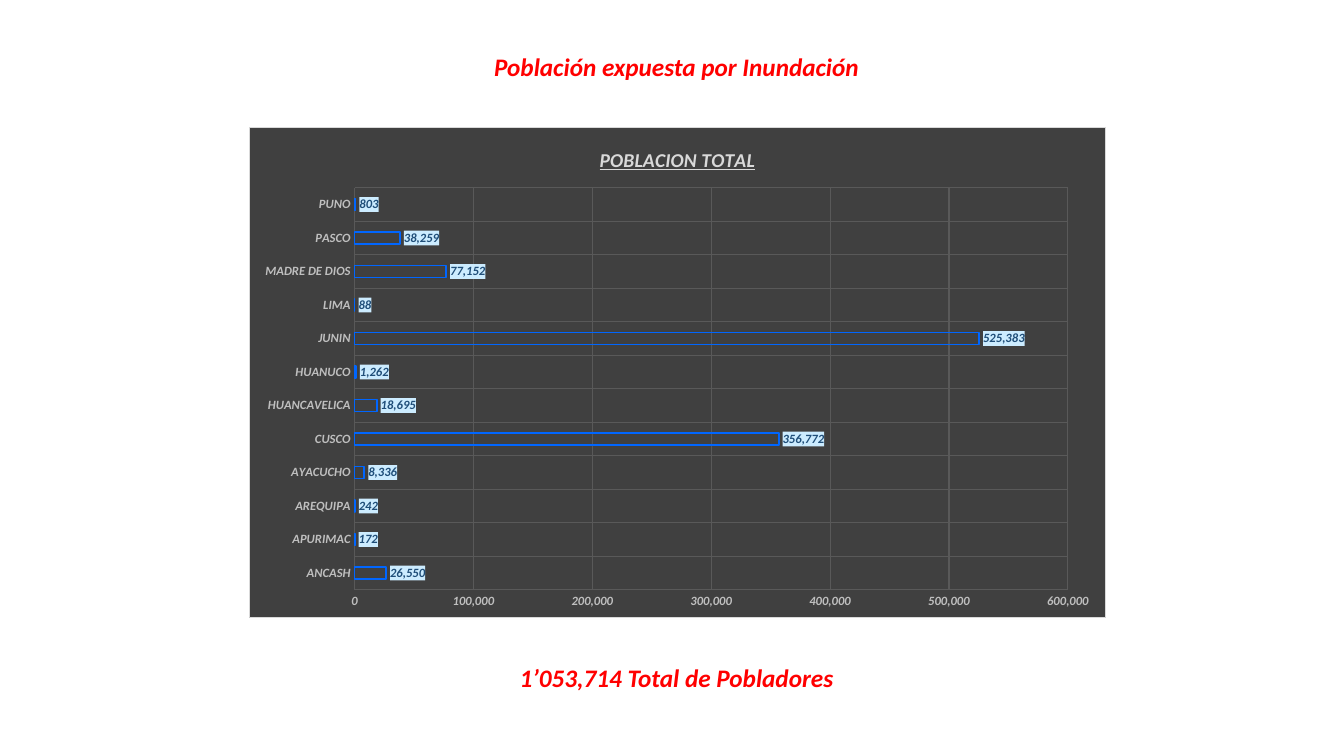
import pptx
import pptx.chart.data
import pptx.dml.color
import pptx.enum.chart
import pptx.enum.text
import pptx.oxml
import pptx.oxml.ns
import pptx.util
from dataclasses import dataclass


@dataclass(frozen=True)
class Theme:
    font: str = "Calibri"
    heading: str = "FF0000"
    panel: str = "404040"
    border: str = "D9D9D9"
    grid: str = "595959"
    axis_text: str = "BFBFBF"
    bar: str = "0066FF"
    label_text: str = "1F4E79"
    label_fill: str = "CCECFF"
    heading_size: int = 18
    chart_title_size: int = 14
    chart_size: int = 9


THEME = Theme()
WIDTH, HEIGHT = pptx.util.Inches(13.33), pptx.util.Inches(7.5)
POPULATION = {
    "ANCASH": 26550, "APURIMAC": 172, "AREQUIPA": 242, "AYACUCHO": 8336,
    "CUSCO": 356772, "HUANCAVELICA": 18695, "HUANUCO": 1262, "JUNIN": 525383,
    "LIMA": 88, "MADRE DE DIOS": 77152, "PASCO": 38259, "PUNO": 803,
}
# Boxes as shares of the slide: left, top, width, height
TITLE_BOX = (0.3, 0.06, 0.407, 0.056)
CHART_BOX = (0.185, 0.168, 0.638, 0.65)
TOTAL_BOX = (0.3, 0.87, 0.407, 0.053)
# Plot area as shares of the chart
PLOT_BOX = {"x": 0.123, "y": 0.123, "w": 0.833, "h": 0.82}


def place(box):
    x, y, w, h = box
    return int(x * WIDTH), int(y * HEIGHT), int(w * WIDTH), int(h * HEIGHT)


def rgb(color):
    return pptx.dml.color.RGBColor.from_string(color)


def set_font(font, size, color):
    font.name, font.size = THEME.font, pptx.util.Pt(size)
    font.bold = font.italic = True
    font.color.rgb = rgb(color)


def set_line(line, color, width):
    line.color.rgb = rgb(color)
    line.width = pptx.util.Pt(width)


def chart_xml(tag, content):
    return pptx.oxml.parse_xml(
        f'<c:{tag} {pptx.oxml.ns.nsdecls("c", "a")}>{content}</c:{tag}>')


def solid_fill(color):
    return f'<a:solidFill><a:srgbClr val="{color}"/></a:solidFill>'


def write_heading(sp, box, text):
    sp.left, sp.top, sp.width, sp.height = place(box)
    tf = sp.text_frame
    tf.text = text
    tf.word_wrap = True
    tf.auto_size = pptx.enum.text.MSO_AUTO_SIZE.NONE
    tf.vertical_anchor = pptx.enum.text.MSO_ANCHOR.MIDDLE
    p = tf.paragraphs[0]
    p.alignment = pptx.enum.text.PP_ALIGN.CENTER
    set_font(p.runs[0].font, THEME.heading_size, THEME.heading)


def style_panel(chart):
    # Dark background with a thin border
    border = f'<a:ln w="9525">{solid_fill(THEME.border)}</a:ln>'
    space = chart.element
    space.find(pptx.oxml.ns.qn("c:chart")).addnext(
        chart_xml("spPr", solid_fill(THEME.panel) + border))

    # Fixed inner plot area
    plot_area = space.find(".//" + pptx.oxml.ns.qn("c:plotArea"))
    for layout in plot_area.findall(pptx.oxml.ns.qn("c:layout")):
        plot_area.remove(layout)
    modes = '<c:layoutTarget val="inner"/><c:xMode val="edge"/><c:yMode val="edge"/>'
    shares = "".join(f'<c:{k} val="{v}"/>' for k, v in PLOT_BOX.items())
    plot_area.insert(0, chart_xml(
        "layout", f"<c:manualLayout>{modes}{shares}</c:manualLayout>"))


def style_axes(chart):
    for axis in (chart.category_axis, chart.value_axis):
        axis.major_tick_mark = pptx.enum.chart.XL_TICK_MARK.NONE
        axis.minor_tick_mark = pptx.enum.chart.XL_TICK_MARK.NONE
        axis.format.line.fill.background()
        axis.has_major_gridlines = True
        set_line(axis.major_gridlines.format.line, THEME.grid, 0.75)
        set_font(axis.tick_labels.font, THEME.chart_size, THEME.axis_text)
    axis = chart.value_axis
    axis.minimum_scale, axis.maximum_scale, axis.major_unit = 0, 600000, 100000
    axis.tick_labels.number_format = "#,##0"
    axis.tick_labels.number_format_is_linked = False


def style_bars(plot):
    plot.gap_width, plot.overlap = 182, -50
    plot.vary_by_categories = False
    series = plot.series[0]
    series.invert_if_negative = False
    series.format.fill.background()
    set_line(series.format.line, THEME.bar, 1.25)

    # Highlighted value labels
    labels = series.data_labels
    labels.show_value = True
    labels.position = pptx.enum.chart.XL_LABEL_POSITION.OUTSIDE_END
    labels.number_format = "#,##0"
    labels.number_format_is_linked = False
    set_font(labels.font, THEME.chart_size, THEME.label_text)
    labels._element.find(pptx.oxml.ns.qn("c:numFmt")).addnext(
        chart_xml("spPr", solid_fill(THEME.label_fill)))


def add_population_chart(s, box):
    data = pptx.chart.data.CategoryChartData(number_format="#,##0")
    data.categories = list(POPULATION)
    data.add_series("POBLACION TOTAL", list(POPULATION.values()))
    chart = s.shapes.add_chart(
        pptx.enum.chart.XL_CHART_TYPE.BAR_CLUSTERED, *place(box), data).chart
    chart.has_legend = False
    set_font(chart.font, THEME.chart_size, THEME.axis_text)
    chart.has_title = True
    tf = chart.chart_title.text_frame
    tf.text = "POBLACION TOTAL"
    font = tf.paragraphs[0].runs[0].font
    set_font(font, THEME.chart_title_size, THEME.border)
    font.underline = True
    chart.chart_title.include_in_layout = False
    style_panel(chart)
    style_axes(chart)
    style_bars(chart.plots[0])


def build_flood_slide(prs):
    s = prs.slides.add_slide(prs.slide_layouts[5])
    write_heading(s.shapes.title, TITLE_BOX, "Población expuesta por Inundación")
    total = s.shapes.add_textbox(*place(TOTAL_BOX))
    write_heading(total, TOTAL_BOX, "1’053,714 Total de Pobladores")
    add_population_chart(s, CHART_BOX)


def main():
    prs = pptx.Presentation()
    prs.slide_width, prs.slide_height = WIDTH, HEIGHT
    build_flood_slide(prs)
    prs.save("out.pptx")


if __name__ == "__main__":
    main()
